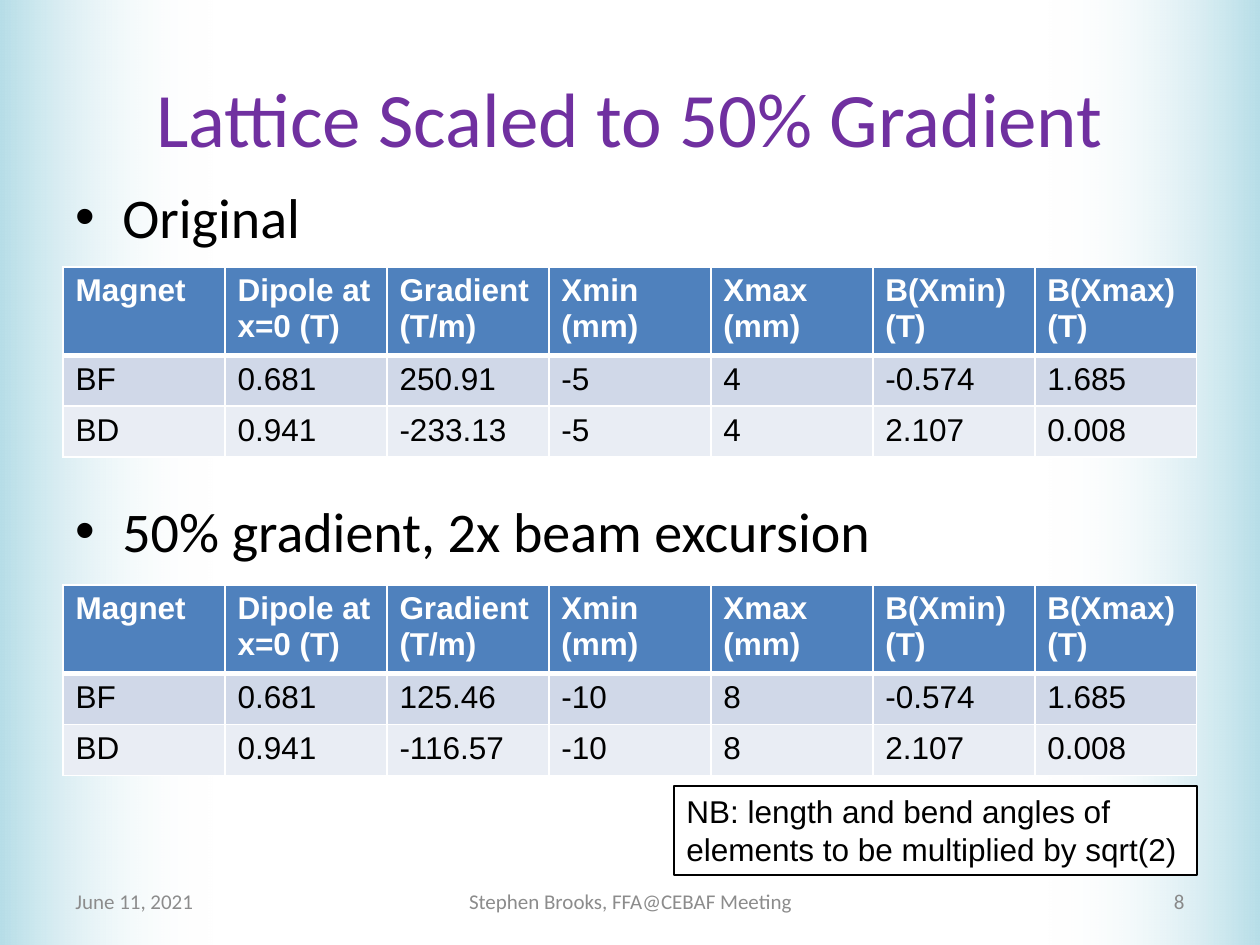
import pptx
import pptx.util
import pptx.dml.color
import pptx.enum.shapes
import pptx.enum.text
import pptx.oxml
import pptx.oxml.ns
import lxml.etree

PX = 914400 // 126
COLORS = {
    "edge": "B7DEE8", "white": "FFFFFF", "black": "000000", "title": "7030A0",
    "footer": "8C8C8C", "number": "898989",
    "header": "4F81BD", "band_dark": "D0D8E8", "band_light": "E9EDF4",
}
ALIGN = pptx.enum.text.PP_ALIGN
ANCHOR = pptx.enum.text.MSO_ANCHOR
RECTANGLE = pptx.enum.shapes.MSO_SHAPE.RECTANGLE
qn = pptx.oxml.ns.qn


def rgb(name):
    return pptx.dml.color.RGBColor.from_string(COLORS[name])


def style(frame, size, font, color, bold=False, align=ALIGN.LEFT):
    """Format every paragraph and run of a text frame."""
    for para in frame.paragraphs:
        para.alignment = align
        for span in para.runs:
            span.font.size = pptx.util.Pt(size)
            span.font.name = font
            span.font.bold = bold
            span.font.color.rgb = rgb(color)


deck = pptx.Presentation()
deck.slide_width, deck.slide_height = pptx.util.Inches(10), pptx.util.Inches(7.5)
page = deck.slides.add_slide(deck.slide_layouts[5])

# Fading side bands
for left, turn in ((1047, 180), (0, 0)):
    band = page.shapes.add_shape(RECTANGLE, left * PX, 0, 213 * PX, 945 * PX)
    band.rotation = turn
    band.shadow.inherit = False
    band.line.fill.background()
    band.fill.gradient()
    band.fill.gradient_angle = 0
    for stop, color, position in zip(band.fill.gradient_stops, ("edge", "white"), (0, 1)):
        stop.color.rgb = rgb(color)
        stop.position = position
    clear_color = band.element.findall(".//" + qn("a:srgbClr"))[-1]
    lxml.etree.SubElement(clear_color, qn("a:alpha"), val="0")

# Title, brought in front of the bands
title = page.shapes.title
title.element.getparent().append(title.element)
title.left, title.top, title.width, title.height = 63 * PX, 38 * PX, 1134 * PX, 158 * PX
title.text_frame.text = "Lattice Scaled to 50% Gradient"
title.text_frame.vertical_anchor = ANCHOR.MIDDLE
style(title.text_frame, 44, "Calibri", "title", align=ALIGN.CENTER)

# Bullets, spaced so that each stands above its table
bullets = page.shapes.add_textbox(63 * PX, 176 * PX, 1134 * PX, 624 * PX).text_frame
bullets.word_wrap = True
bullets.text = "Original\n50% gradient, 2x beam excursion"
style(bullets, 32, "Calibri", "black")
bullets.paragraphs[1].space_before = pptx.util.Pt(141)
for para in bullets.paragraphs:
    properties = para._p.get_or_add_pPr()
    properties.set("marL", str(47 * PX))
    properties.set("indent", str(-47 * PX))
    lxml.etree.SubElement(properties, qn("a:buFont"), typeface="Arial")
    lxml.etree.SubElement(properties, qn("a:buChar"), char="•")

# Footer
footers = (
    (63, 294, "June 11, 2021", "footer", ALIGN.LEFT),
    (431, 399, "Stephen Brooks, FFA@CEBAF Meeting", "footer", ALIGN.CENTER),
    (903, 294, "8", "number", ALIGN.RIGHT),
)
for left, width, text, color, align in footers:
    footer = page.shapes.add_textbox(left * PX, 876 * PX, width * PX, 50 * PX).text_frame
    footer.word_wrap = True
    footer.vertical_anchor = ANCHOR.MIDDLE
    footer.text = text
    style(footer, 12, "Calibri", color, align=align)

# Magnet tables
header = ("Magnet", "Dipole at x=0 (T)", "Gradient (T/m)", "Xmin (mm)", "Xmax (mm)",
          "B(Xmin) (T)", "B(Xmax) (T)")
tables = (
    (267, (("BF", "0.681", "250.91", "-5", "4", "-0.574", "1.685"),
           ("BD", "0.941", "-233.13", "-5", "4", "2.107", "0.008"))),
    (585, (("BF", "0.681", "125.46", "-10", "8", "-0.574", "1.685"),
           ("BD", "0.941", "-116.57", "-10", "8", "2.107", "0.008"))),
)
row_heights = (84, 51, 51)
row_fills = ("header", "band_dark", "band_light")
for top, body in tables:
    table = page.shapes.add_table(3, 7, 63 * PX, top * PX, 1134 * PX, sum(row_heights) * PX).table
    for column in table.columns:
        column.width = 162 * PX
    for r, values in enumerate((header, *body)):
        table.rows[r].height = row_heights[r] * PX
        for c, value in enumerate(values):
            cell = table.cell(r, c)
            cell.text = value
            style(cell.text_frame, 18, "Arial", "black" if r else "white", bold=r == 0)
            borders = cell._tc.get_or_add_tcPr()
            for side in ("lnL", "lnR", "lnT", "lnB"):
                thick = (r, side) in ((0, "lnB"), (1, "lnT"))
                width = pptx.util.Pt(3 if thick else 1)
                line = lxml.etree.SubElement(borders, qn("a:" + side), w=str(width))
                paint = lxml.etree.SubElement(line, qn("a:solidFill"))
                lxml.etree.SubElement(paint, qn("a:srgbClr"), val=COLORS["white"])
            cell.fill.solid()
            cell.fill.fore_color.rgb = rgb(row_fills[r])

# Note
note = page.shapes.add_shape(RECTANGLE, 674 * PX, 786 * PX, 523 * PX, 89 * PX)
note.shadow.inherit = False
note.fill.solid()
note.fill.fore_color.rgb = rgb("white")
note.line.color.rgb = rgb("black")
note.line.width = pptx.util.Pt(0.75)
note.text_frame.text = "NB: length and bend angles of elements to be multiplied by sqrt(2)"
note.text_frame.vertical_anchor = ANCHOR.TOP
style(note.text_frame, 18, "Arial", "black")

deck.save("out.pptx")
